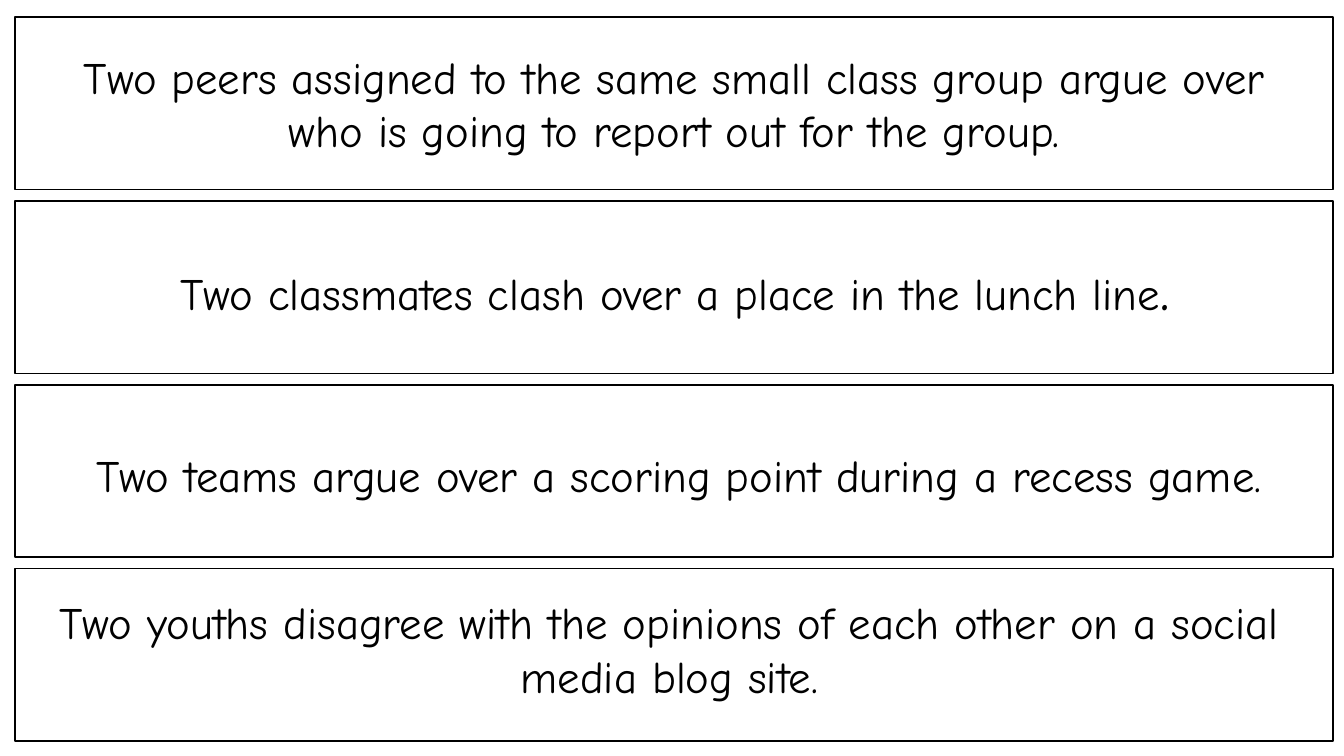
from pptx import Presentation
from pptx.dml.color import RGBColor
from pptx.enum.shapes import MSO_SHAPE
from pptx.enum.text import MSO_AUTO_SIZE, PP_ALIGN
from pptx.util import Inches, Pt

BLACK = RGBColor(0x00, 0x00, 0x00)
WHITE = RGBColor(0xFF, 0xFF, 0xFF)
FONT = "Comic Neue"

# Frames: one per scenario, stacked at an equal pitch
FRAME_LEFT, FRAME_TOP = 0.15, 0.17
FRAME_WIDTH, FRAME_HEIGHT = 13.07, 1.71
FRAME_PITCH = 1.824

# Each scenario: text box (left, top, width, height) and runs (text, size)
SCENARIOS = [
    ((0.35, 0.44, 12.68, 1.18),
     [("Two peers assigned to the same small class group argue over "
       "who is going to report out for the group.", 32)]),
    ((0.46, 2.42, 12.68, 0.84),
     [("Two classmates clash over a place in the lunch line", 32),
      (". ", 44)]),
    ((0.22, 4.39, 13.04, 0.64),
     [("Two teams argue over a scoring point during a recess game.", 32)]),
    ((0.3, 5.85, 12.68, 1.18),
     [("Two youths disagree with the opinions of each other on a social "
       "media blog site.", 32)]),
]


def set_attributes(target, values):
    for name, value in values.items():
        setattr(target, name, value)


def add_frame(slide, row):
    top = FRAME_TOP + row * FRAME_PITCH
    frame = slide.shapes.add_shape(
        MSO_SHAPE.RECTANGLE, Inches(FRAME_LEFT), Inches(top),
        Inches(FRAME_WIDTH), Inches(FRAME_HEIGHT))
    frame.shadow.inherit = False
    frame.fill.solid()
    frame.fill.fore_color.rgb = WHITE
    frame.line.color.rgb = BLACK
    frame.line.width = Pt(1)


def add_scenario(slide, box, runs):
    text_box = slide.shapes.add_textbox(*(Inches(length) for length in box))
    text_frame = text_box.text_frame
    set_attributes(text_frame, {
        "word_wrap": True, "auto_size": MSO_AUTO_SIZE.SHAPE_TO_FIT_TEXT})
    paragraph = text_frame.paragraphs[0]
    paragraph.alignment = PP_ALIGN.CENTER
    for text, size in runs:
        run = paragraph.add_run()
        run.text = text
        set_attributes(run.font, {"name": FONT, "size": Pt(size)})
        run.font.color.rgb = BLACK


def main():
    presentation = Presentation()
    set_attributes(presentation, {
        "slide_width": Inches(13.33), "slide_height": Inches(7.5)})
    blank_layout = presentation.slide_layouts[6]
    slide = presentation.slides.add_slide(blank_layout)

    # Frames behind, scenario texts in front
    for row in range(len(SCENARIOS)):
        add_frame(slide, row)
    for box, runs in SCENARIOS:
        add_scenario(slide, box, runs)

    presentation.save("out.pptx")


if __name__ == "__main__":
    main()
